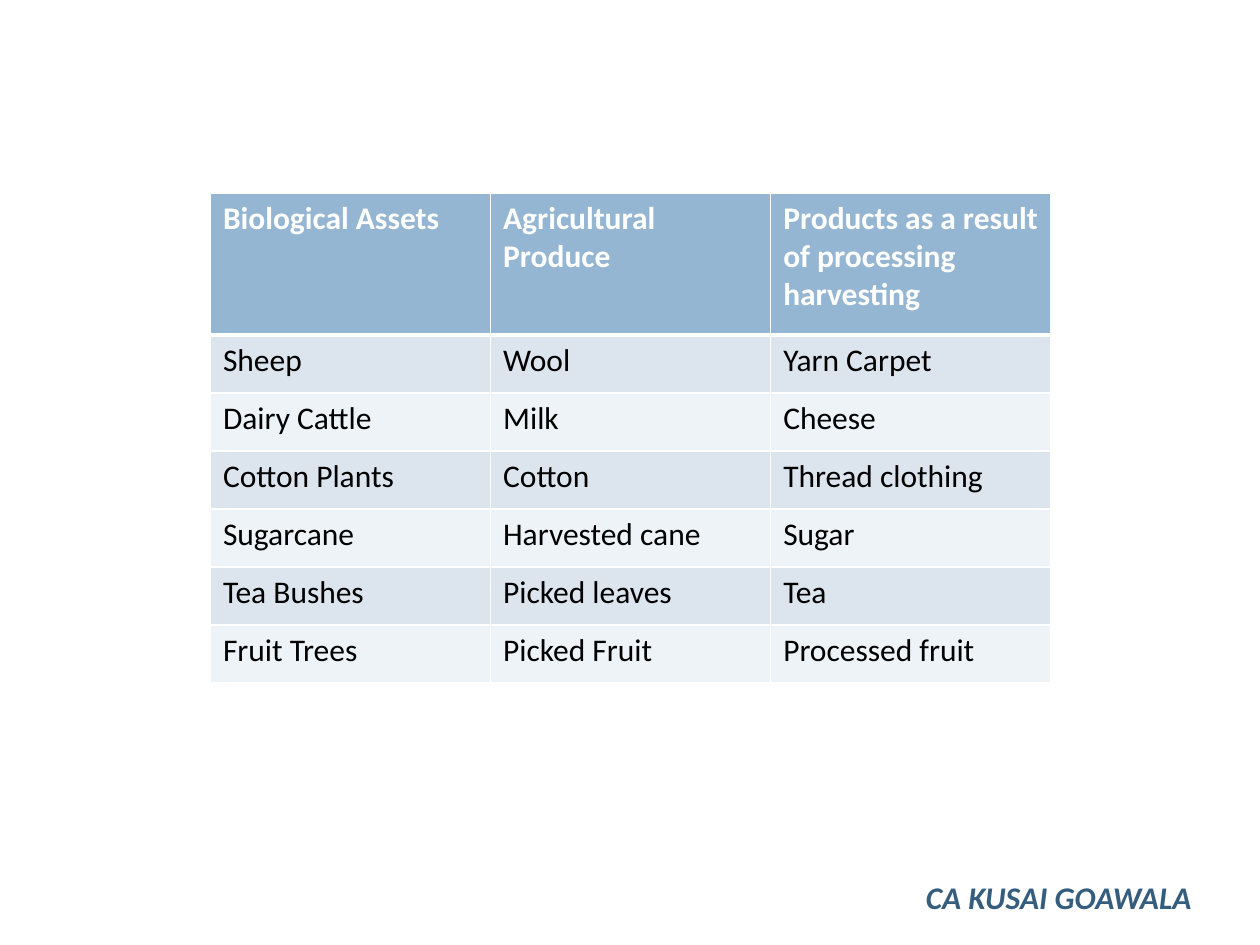
import dataclasses

import pptx
import pptx.dml.color
import pptx.oxml
import pptx.oxml.ns
import pptx.util

Inches = pptx.util.Inches
Pt = pptx.util.Pt

COLORS = {
    "head": "94B6D2",
    "odd": "DCE5EE",
    "even": "EEF3F7",
    "line": "FFFFFF",
    "black": "000000",
    "name": "355D7E",
}


@dataclasses.dataclass
class Row:
    texts: tuple[str, str, str]
    fill: str
    ink: str = "black"
    bold: bool = False
    height: float = 0.46
    top: int = 1
    base: int = 1


ASSETS = [
    ("Sheep", "Wool", "Yarn Carpet"),
    ("Dairy Cattle", "Milk", "Cheese"),
    ("Cotton Plants", "Cotton", "Thread clothing"),
    ("Sugarcane", "Harvested cane", "Sugar"),
    ("Tea Bushes", "Picked leaves", "Tea"),
    ("Fruit Trees", "Picked Fruit", "Processed fruit"),
]
HEAD = Row(
    ("Biological Assets", "Agricultural Produce",
     "Products as a result of processing harvesting"),
    "head", "line", True, 1.13, base=3,
)
ROWS = [HEAD] + [
    Row(texts, "even" if i % 2 else "odd", top=1 if i else 3)
    for i, texts in enumerate(ASSETS)
]


def rgb(name: str) -> pptx.dml.color.RGBColor:
    return pptx.dml.color.RGBColor.from_string(COLORS[name])


def style(para, ink: str, bold: bool, slant: bool = False) -> None:
    font = para.font
    font.name, font.size = "Calibri", Pt(18)
    font.bold, font.italic = bold, slant
    font.color.rgb = rgb(ink)


def border(cell, side: str, width: int) -> None:
    cell._tc.get_or_add_tcPr().append(pptx.oxml.parse_xml(
        f'<a:ln{side} {pptx.oxml.ns.nsdecls("a")} w="{Pt(width)}">'
        f'<a:solidFill><a:srgbClr val="{COLORS["line"]}"/></a:solidFill>'
        f'</a:ln{side}>'
    ))


def draw_cell(cell, text: str, row: Row) -> None:
    cell.text = text
    style(cell.text_frame.paragraphs[0], row.ink, row.bold)
    # Borders come before the fill in the cell's properties
    for side, width in (("L", 1), ("R", 1), ("T", row.top), ("B", row.base)):
        border(cell, side, width)
    cell.fill.solid()
    cell.fill.fore_color.rgb = rgb(row.fill)


def draw_table(slide, rows: list[Row]) -> None:
    count = len(rows[0].texts)
    height = sum(row.height for row in rows)
    table = slide.shapes.add_table(
        len(rows), count, Inches(1.67), Inches(1.53),
        Inches(6.67), Inches(height),
    ).table
    for i, row in enumerate(rows):
        table.rows[i].height = Inches(row.height)
        for j, text in enumerate(row.texts):
            draw_cell(table.cell(i, j), text, row)


def draw_name(slide, text: str) -> None:
    box = slide.shapes.add_textbox(
        Inches(7.25), Inches(6.92), Inches(2.58), Inches(0.4))
    frame = box.text_frame
    frame.word_wrap = True
    frame.text = text
    style(frame.paragraphs[0], "name", True, True)


def main() -> None:
    deck = pptx.Presentation()
    deck.slide_width, deck.slide_height = Inches(10), Inches(7.5)
    slide = deck.slides.add_slide(deck.slide_layouts[6])

    # Author's name at the lower right
    draw_name(slide, "CA KUSAI GOAWALA")

    # Assets, their produce and the processed goods
    draw_table(slide, ROWS)

    deck.save("out.pptx")


if __name__ == "__main__":
    main()
